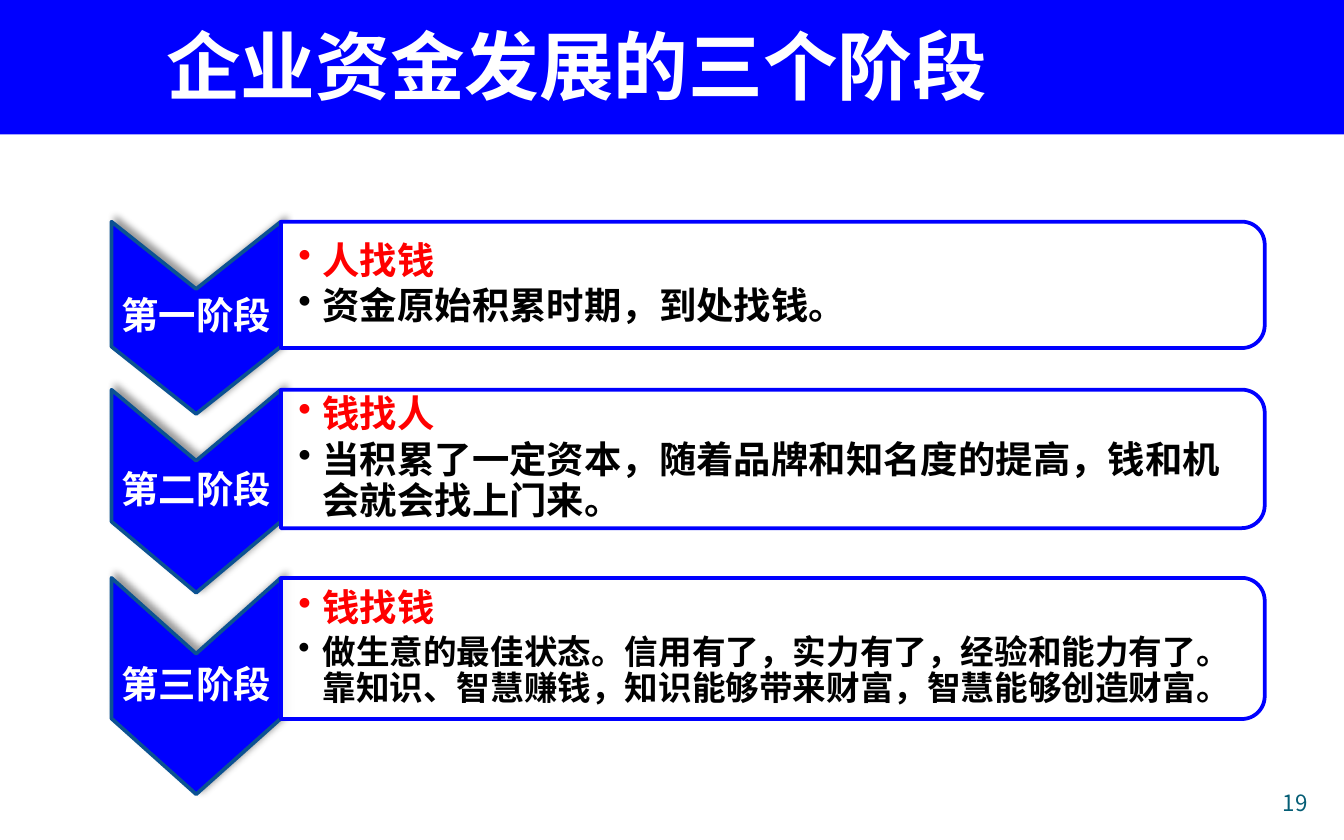
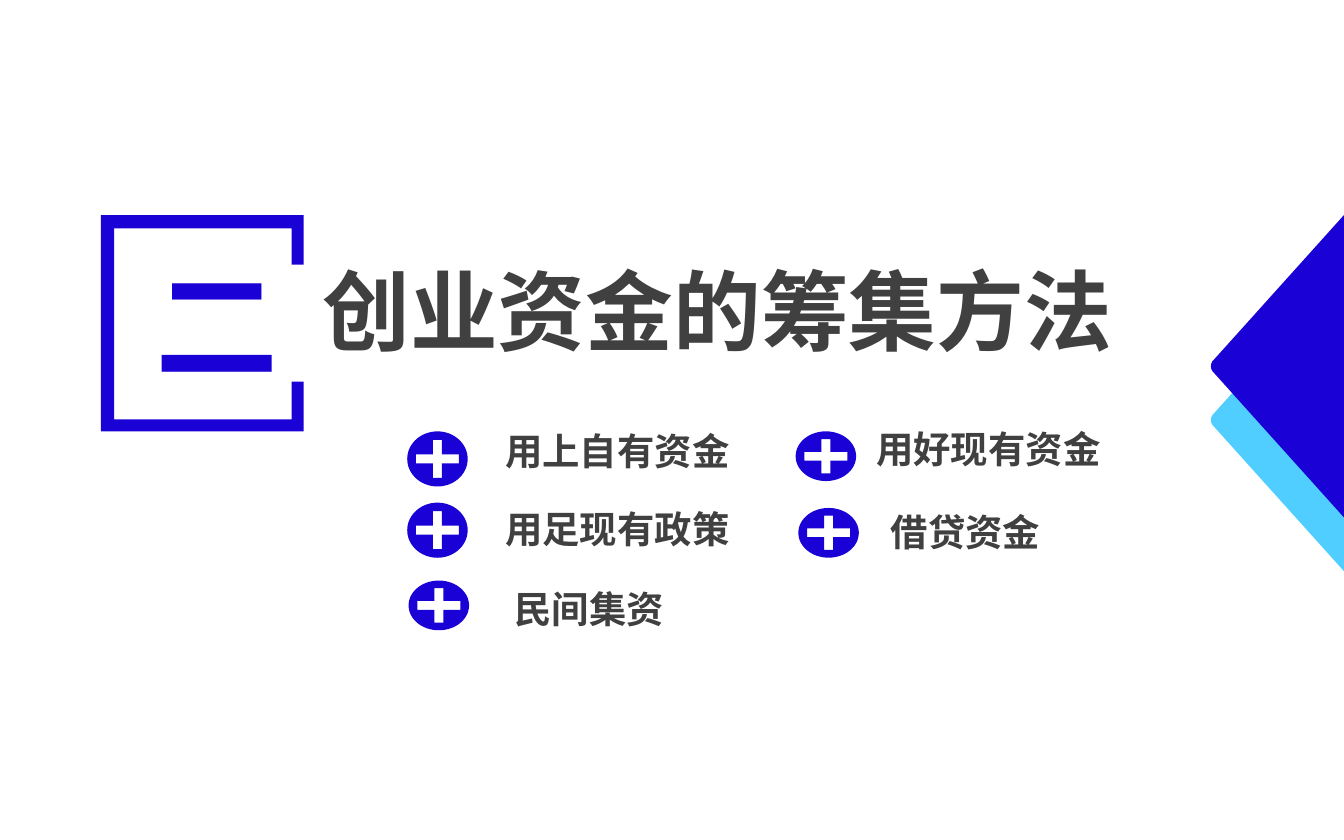
from dataclasses import dataclass
from math import cos, pi, sin

from lxml.etree import SubElement
from pptx import Presentation
from pptx.dml.color import RGBColor
from pptx.enum.shapes import MSO_SHAPE
from pptx.enum.text import MSO_ANCHOR, PP_ALIGN
from pptx.oxml.ns import qn
from pptx.util import Pt

PX = 9144  # EMU per px, 100 px to the inch


@dataclass(frozen=True)
class Theme:
    font: str = "Noto Sans CJK SC"
    band: str = "0000FF"
    accent: str = "1A01D5"
    sky: str = "4FCEFF"
    edge: str = "0B5292"
    white: str = "FFFFFF"
    black: str = "000000"
    highlight: str = "FF0000"
    ink: str = "404040"
    page_number: str = "045D75"
    number_size: int = 12
    small_size: int = 18
    body_size: int = 20
    title_size: int = 40
    section_size: int = 47
    numeral_size: int = 66


def arc(center_x, center_y, radius_x, radius_y, start, end, steps):
    """Points along an elliptical arc; angles are in radians, clockwise from the right."""
    angles = [start + (end - start) * step / steps for step in range(steps + 1)]
    return [(center_x + radius_x * cos(a), center_y + radius_y * sin(a)) for a in angles]


class SlideBuilder:
    def __init__(self, deck, theme):
        self.deck = deck
        self.theme = theme
        self.slide = None

    def new_slide(self):
        self.slide = self.deck.slides.add_slide(self.deck.slide_layouts[6])

    def paint(self, shape, fill, line=None, opacity=100):
        shape.shadow.inherit = False
        shape.fill.solid()
        shape.fill.fore_color.rgb = RGBColor.from_string(fill)
        if opacity < 100:
            color = shape.fill._xPr.find(qn("a:solidFill"))[0]
            SubElement(color, qn("a:alpha"), val=str(opacity * 1000))
        if line:
            shape.line.color.rgb = RGBColor.from_string(line)
            shape.line.width = Pt(2)
        else:
            shape.line.fill.background()

    def rectangle(self, left, top, width, height, fill):
        shape = self.slide.shapes.add_shape(
            MSO_SHAPE.RECTANGLE, left * PX, top * PX, width * PX, height * PX)
        self.paint(shape, fill)

    def outline(self, contours, fill, line=None, opacity=100):
        """Closed shape from one or more contours; an inner contour is a hole."""
        contours = [[(round(x * PX), round(y * PX)) for x, y in points] for points in contours]
        builder = self.slide.shapes.build_freeform(*contours[0][0])
        builder.add_line_segments(contours[0][1:], close=True)
        for points in contours[1:]:
            builder.move_to(*points[0])
            builder.add_line_segments(points[1:], close=True)
        shape = builder.convert_to_shape()
        self.paint(shape, fill, line, opacity)
        return shape

    def cast_shadow(self, shape):
        effects = shape._element.spPr.find(qn("a:effectLst"))
        shadow = SubElement(effects, qn("a:outerShdw"), blurRad=str(Pt(4)), dist=str(Pt(3)),
                            dir="18900000", algn="bl", rotWithShape="0")
        color = SubElement(shadow, qn("a:srgbClr"), val=self.theme.black)
        SubElement(color, qn("a:alpha"), val="40000")

    def frame(self, shape, insets, anchor):
        text_frame = shape.text_frame
        text_frame.word_wrap = True
        text_frame.vertical_anchor = anchor
        (text_frame.margin_left, text_frame.margin_top,
         text_frame.margin_right, text_frame.margin_bottom) = [inset * PX for inset in insets]
        return text_frame

    def format(self, para, size, color, bold=True, align=PP_ALIGN.LEFT):
        para.alignment = align
        for span in para.runs:
            span.font.name = self.theme.font
            span.font.size = Pt(size)
            span.font.bold = bold
            span.font.color.rgb = RGBColor.from_string(color)
            SubElement(span.font._element, qn("a:ea"), typeface=self.theme.font)

    def text(self, left, top, width, height, words, size, color, bold=True,
             align=PP_ALIGN.LEFT, anchor=MSO_ANCHOR.TOP, insets=(10, 5, 10, 5)):
        box = self.slide.shapes.add_textbox(left * PX, top * PX, width * PX, height * PX)
        para = self.frame(box, insets, anchor).paragraphs[0]
        para.text = words
        self.format(para, size, color, bold, align)

    def bullet(self, para):
        para.level = 1
        properties = para._p.get_or_add_pPr()
        properties.set("marL", str(18 * PX))
        properties.set("indent", str(-18 * PX))
        SubElement(properties, qn("a:buChar"), char="•")

    def chevron(self, left, top, width, height, label):
        notch = 0.35 * height
        right, middle, bottom = left + width, left + width / 2, top + height
        shape = self.outline(
            [[(right, top), (right, bottom - notch), (middle, bottom),
              (left, bottom - notch), (left, top), (middle, top + notch)]],
            self.theme.band, self.theme.edge)
        self.cast_shadow(shape)
        para = self.frame(shape, (1, 56, 1, 56), MSO_ANCHOR.MIDDLE).paragraphs[0]
        para.text = label
        para.line_spacing = 0.9
        para.space_after = Pt(7)
        self.format(para, self.theme.body_size, self.theme.white, align=PP_ALIGN.CENTER)

    def panel(self, left, top, width, height, heading, detail, detail_size, opacity):
        """Box with its right corners rounded, holding a heading and a detail bullet."""
        right, bottom, radius = left + width, top + height, 17
        shape = self.outline(
            [[(left, top),
              *arc(right - radius, top + radius, radius, radius, -pi / 2, 0, 12),
              *arc(right - radius, bottom - radius, radius, radius, 0, pi / 2, 12),
              (left, bottom)]],
            self.theme.white, self.theme.band, opacity)
        text_frame = self.frame(shape, (13, 6, 6, 6), MSO_ANCHOR.MIDDLE)
        text_frame.text = f"{heading}\n{detail}"
        styles = [(self.theme.body_size, self.theme.highlight), (detail_size, self.theme.black)]
        for para, (size, color) in zip(text_frame.paragraphs, styles):
            self.bullet(para)
            para.line_spacing = 0.9
            para.space_after = Pt(3)
            self.format(para, size, color)

    def plus_badge(self, left, top, height):
        """Filled ellipse with a plus sign cut out of it."""
        width, arm = 45, 3.3
        x, y = left + width / 2, top + height / 2
        reach_x, reach_y = 16, 0.345 * height
        plus = [(-arm, reach_y), (arm, reach_y), (arm, arm), (reach_x, arm),
                (reach_x, -arm), (arm, -arm), (arm, -reach_y), (-arm, -reach_y),
                (-arm, -arm), (-reach_x, -arm), (-reach_x, arm), (-arm, arm)]
        self.outline([arc(x, y, width / 2, height / 2, 0, 2 * pi, 60),
                      [(x + dx, y + dy) for dx, dy in plus]], self.theme.accent)

    def edge_arrow(self, top, fill):
        """Triangle against the right edge, pointing left with a blunt tip."""
        middle = top + 112.5
        self.outline([[(1000, top), (902, middle - 3.5), (901.3, middle - 2), (901, middle),
                       (901.3, middle + 2), (902, middle + 3.5), (1000, top + 225)]], fill)


def stages_slide(builder):
    theme = builder.theme
    builder.new_slide()
    builder.rectangle(0, -2, 1000, 102, theme.band)
    stages = [
        (165, 143, 94, "第一阶段", "人找钱", "资金原始积累时期，到处找钱。", theme.body_size, 100),
        (290, 151, 103, "第二阶段", "钱找人",
         "当积累了一定资本，随着品牌和知名度的提高，钱和机会就会找上门来。", theme.body_size, 90),
        (430, 161, 105, "第三阶段", "钱找钱",
         "做生意的最佳状态。信用有了，实力有了，经验和能力有了。"
         "靠知识、智慧赚钱，知识能够带来财富，智慧能够创造财富。", theme.small_size, 90),
    ]
    for top, chevron_height, panel_height, label, heading, detail, size, opacity in stages:
        builder.chevron(83, top, 126, chevron_height, label)
        builder.panel(209, top, 732, panel_height, heading, detail, size, opacity)
    builder.text(890, 574, 83, 33, "19", theme.number_size, theme.page_number, bold=False,
                 align=PP_ALIGN.RIGHT, anchor=MSO_ANCHOR.BOTTOM, insets=(0, 0, 0, 0))
    builder.text(114, 10, 850, 77, "企业资金发展的三个阶段", theme.title_size, theme.white)


def section_slide(builder):
    theme = builder.theme
    builder.new_slide()
    builder.edge_arrow(200, theme.sky)
    builder.edge_arrow(160, theme.accent)
    builder.text(240, 191, 614, 79, "创业资金的筹集方法", theme.section_size, theme.ink,
                 insets=(0, 0, 0, 0))
    builder.outline([[(75, 160), (226, 160), (226, 197), (217, 197), (217, 170), (85, 170),
                      (85, 312), (217, 312), (217, 284), (226, 284), (226, 321), (75, 321)]],
                    theme.accent)
    builder.text(106, 180, 104, 121, "二", theme.numeral_size, theme.accent,
                 align=PP_ALIGN.CENTER)
    methods = [
        ("用上自有资金", 366, 314, 303, 321, 41),
        ("用好现有资金", 642, 312, 592, 321, 37),
        ("用足现有政策", 366, 372, 303, 374, 41),
        ("借贷资金", 653, 374, 594, 378, 37),
        ("民间集资", 373, 431, 304, 432, 37),
    ]
    for words, left, top, badge_left, badge_top, badge_height in methods:
        builder.text(left, top, 212, 44, words, theme.body_size, theme.ink)
        builder.plus_badge(badge_left, badge_top, badge_height)


def main():
    deck = Presentation()
    deck.slide_width, deck.slide_height = 1000 * PX, 625 * PX
    builder = SlideBuilder(deck, Theme())
    stages_slide(builder)
    section_slide(builder)
    deck.save("out.pptx")


if __name__ == "__main__":
    main()
